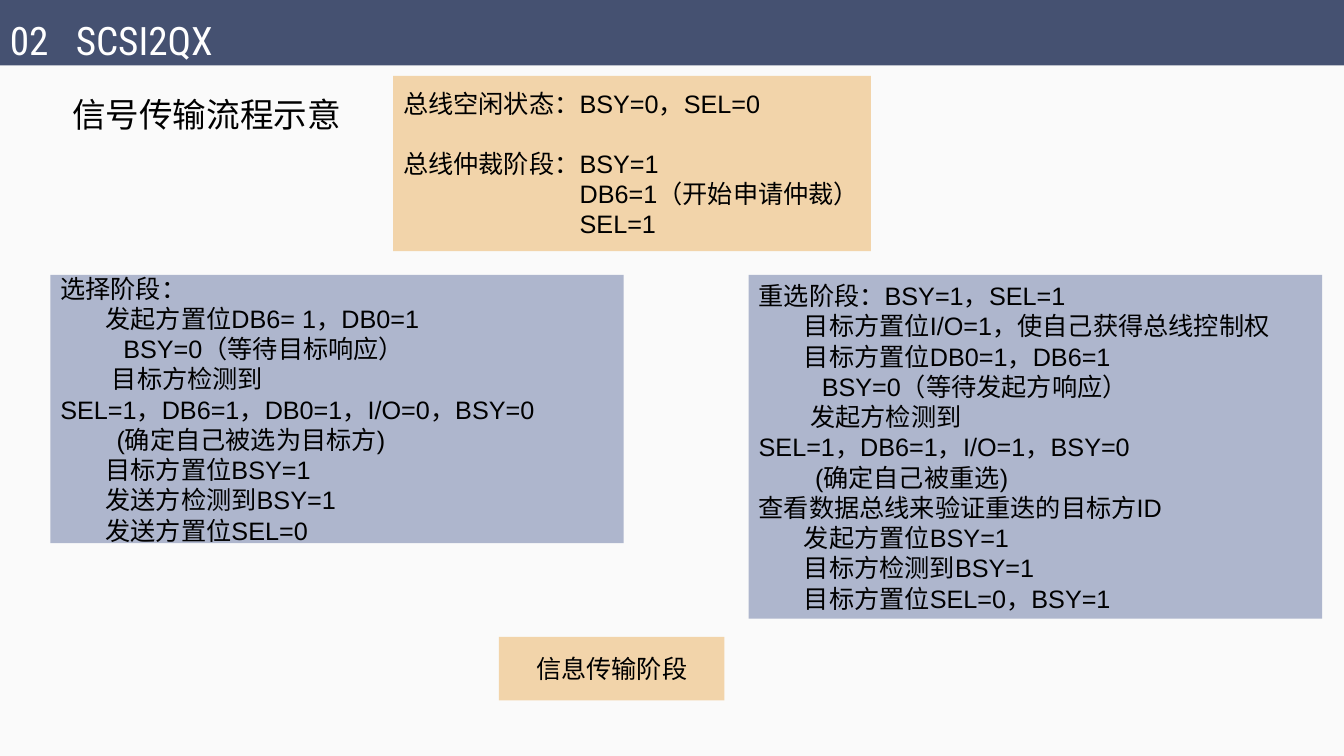
from lxml import etree
from pptx import Presentation
from pptx.dml.color import RGBColor
from pptx.enum.shapes import MSO_SHAPE
from pptx.enum.text import MSO_ANCHOR, PP_ALIGN
from pptx.oxml.ns import qn
from pptx.util import Cm, Pt

RECTANGLE = MSO_SHAPE.RECTANGLE
MIDDLE = MSO_ANCHOR.MIDDLE
LEFT, CENTER = PP_ALIGN.LEFT, PP_ALIGN.CENTER

BACKGROUND = RGBColor(0xFA, 0xFA, 0xFA)
NAVY = RGBColor(0x45, 0x51, 0x71)
SAND = RGBColor(0xF2, 0xD4, 0xAA)
LAVENDER = RGBColor(0xAE, 0xB6, 0xCD)
BLACK = RGBColor(0, 0, 0)
WHITE = RGBColor(0xFF, 0xFF, 0xFF)

STEP, DETECT, CONFIRM, WAIT = 1.14, 1.3, 1.42, 1.59
SIGNAL = 4.45

BUS_PHASES = [
    (0, "总线空闲状态：BSY=0，SEL=0"),
    (0, "总线仲裁阶段：BSY=1"),
    (SIGNAL, "DB6=1（开始申请仲裁）"),
    (SIGNAL, "SEL=1"),
]
SELECTION = [
    (0, "选择阶段："),
    (STEP, "发起方置位DB6= 1，DB0=1"),
    (WAIT, "BSY=0（等待目标响应）"),
    (DETECT, "目标方检测到"),
    (0, "SEL=1，DB6=1，DB0=1，I/O=0，BSY=0"),
    (CONFIRM, "(确定自己被选为目标方)"),
    (STEP, "目标方置位BSY=1"),
    (STEP, "发送方检测到BSY=1"),
    (STEP, "发送方置位SEL=0"),
]
RESELECTION = [
    (0, "重选阶段：BSY=1，SEL=1"),
    (STEP, "目标方置位I/O=1，使自己获得总线控制权"),
    (STEP, "目标方置位DB0=1，DB6=1"),
    (WAIT, "BSY=0（等待发起方响应）"),
    (DETECT, "发起方检测到"),
    (0, "SEL=1，DB6=1，I/O=1，BSY=0"),
    (CONFIRM, "(确定自己被重选)"),
    (0, "查看数据总线来验证重迭的目标方ID"),
    (STEP, "发起方置位BSY=1"),
    (STEP, "目标方检测到BSY=1"),
    (STEP, "目标方置位SEL=0，BSY=1"),
]


class SlideBuilder:
    body_font = "Arial"
    header_font = "Roboto Condensed"
    body_size = 18

    def __init__(self, slide):
        self.slide = slide
        fill = slide.background.fill
        fill.solid()
        fill.fore_color.rgb = BACKGROUND

    def style(self, paragraph, font, size, color, align=LEFT):
        paragraph.font.name = font
        paragraph.font.size = Pt(size)
        paragraph.font.color.rgb = color
        paragraph.alignment = align

    def text(self, left, top, width, height, words, font, size, color):
        box = self.slide.shapes.add_textbox(Cm(left), Cm(top), Cm(width), Cm(height))
        box.text_frame.word_wrap = True
        paragraph = box.text_frame.paragraphs[0]
        paragraph.text = words
        self.style(paragraph, font, size, color)
        return paragraph

    def tab_stop(self, paragraph, position):
        properties = paragraph._p.get_or_add_pPr()
        stops = etree.Element(qn("a:tabLst"))
        etree.SubElement(stops, qn("a:tab"), pos=str(Cm(position)), algn="l")
        properties.insert(0, stops)

    def panel(self, left, top, width, height, color, lines=(), align=LEFT):
        panel = self.slide.shapes.add_shape(
            RECTANGLE, Cm(left), Cm(top), Cm(width), Cm(height))
        panel.shadow.inherit = False
        panel.fill.solid()
        panel.fill.fore_color.rgb = color
        panel.line.fill.background()
        frame = panel.text_frame
        frame.word_wrap = True
        frame.vertical_anchor = MIDDLE
        for number, (indent, words) in enumerate(lines):
            paragraph = frame.add_paragraph() if number else frame.paragraphs[0]
            paragraph.text = words
            self.style(paragraph, self.body_font, self.body_size, BLACK, align)
            if indent:
                paragraph._p.get_or_add_pPr().set("indent", str(Cm(indent)))
        return frame


def main():
    deck = Presentation()
    deck.slide_width, deck.slide_height = Cm(33.87), Cm(19.05)
    builder = SlideBuilder(deck.slides.add_slide(deck.slide_layouts[6]))

    builder.text(1.57, 2.24, 21.08, 1.27, "信号传输流程示意",
                 builder.body_font, 24, BLACK)
    builder.panel(0, 0, 33.87, 1.65, NAVY)
    header = builder.text(0, 0.28, 19.5, 1.37, "02\tSCSI2QX",
                          builder.header_font, 28, WHITE)
    builder.tab_stop(header, 1.66)

    bus = builder.panel(9.91, 1.91, 12.04, 4.42, SAND, BUS_PHASES)
    bus.paragraphs[1].space_before = Pt(21.5)
    builder.panel(1.27, 6.93, 14.45, 6.76, LAVENDER, SELECTION)
    builder.panel(18.87, 6.93, 14.45, 8.66, LAVENDER, RESELECTION)
    builder.panel(12.57, 16.05, 5.69, 1.6, SAND, [(0, "信息传输阶段")], CENTER)

    deck.save("out.pptx")


if __name__ == "__main__":
    main()
